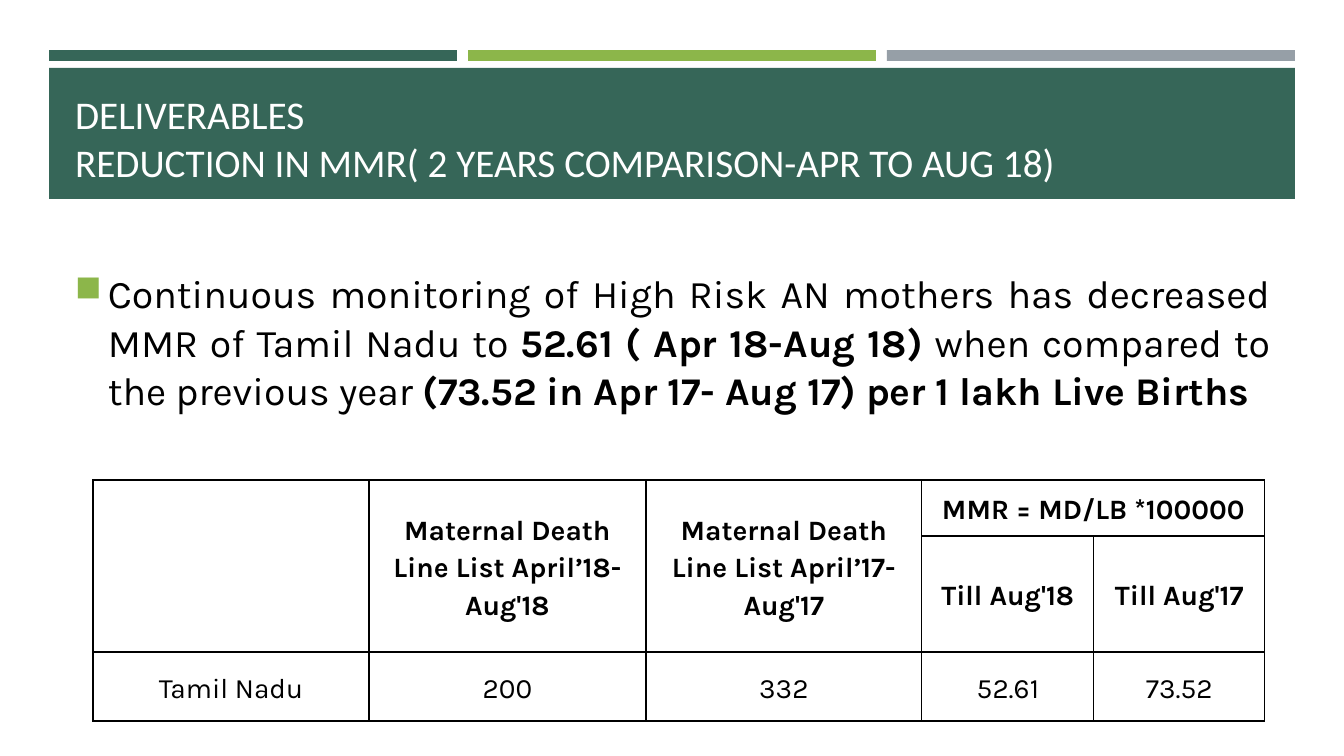
from lxml.etree import SubElement
from pptx import Presentation
from pptx.dml.color import RGBColor
from pptx.enum.shapes import MSO_SHAPE
from pptx.enum.text import MSO_ANCHOR, MSO_AUTO_SIZE, PP_ALIGN
from pptx.oxml.ns import qn
from pptx.util import Pt

COLORS = {"green": "366658", "lime": "8CB64A", "gray": "969FA7",
          "white": "FFFFFF", "black": "000000"}
TITLE = "DELIVERABLES\vREDUCTION IN MMR( 2 YEARS COMPARISON-APR TO AUG 18)"
# Each run is (text, bold)
BODY = [
    ("Continuous monitoring of High Risk AN mothers has decreased MMR of Tamil Nadu to ", False),
    ("52.61 ( Apr 18-Aug 18)", True),
    (" when compared to the previous year ", False),
    ("(73.52 in Apr 17- Aug 17) per 1 lakh Live Births", True),
]
TABLE = [
    ["", "Maternal Death Line List April’18-Aug'18",
     "Maternal Death Line List April’17-Aug'17", "MMR = MD/LB *100000", ""],
    ["", "", "", "Till Aug'18", "Till Aug'17"],
    ["Tamil Nadu", "200", "332", "52.61", "73.52"],
]
MERGES = [((0, c), (1, c)) for c in range(3)] + [((0, 3), (0, 4))]
COL_WIDTHS = [276, 277, 276, 172, 171]
ROW_HEIGHTS = [56, 114, 69]
HEADER_ROWS = 2


def px(n):
    return round(n * 9144000 / 1008)


def rgb(name):
    return RGBColor.from_string(COLORS[name])


def place(sp, left, top, width, height):
    sp.left, sp.top, sp.width, sp.height = map(px, (left, top, width, height))


def write(tf, runs, size, font="Karla", color="black", align=PP_ALIGN.LEFT, spacing=1.0):
    """Fill the first paragraph with (text, bold) runs."""
    p = tf.paragraphs[0]
    p.alignment, p.line_spacing = align, spacing
    for text, bold in runs:
        for i, line in enumerate(text.split("\v")):
            if i:
                p.add_line_break()
            r = p.add_run()
            r.text = line
            r.font.size, r.font.name, r.font.bold = Pt(size), font, bold
            r.font.color.rgb = rgb(color)
    return p


def add_bar(slide, color, *box):
    sp = slide.shapes.add_shape(MSO_SHAPE.RECTANGLE, *map(px, box))
    sp.shadow.inherit = False
    sp.fill.solid()
    sp.fill.fore_color.rgb = rgb(color)
    sp.line.fill.background()


def add_bullet(p, char, color, percent, indent):
    pPr = p._p.get_or_add_pPr()
    pPr.set("marL", str(px(indent)))
    pPr.set("indent", str(-px(indent)))
    clr = SubElement(pPr, qn("a:buClr"))
    SubElement(clr, qn("a:srgbClr"), val=COLORS[color])
    SubElement(pPr, qn("a:buSzPct"), val=str(percent * 1000))
    SubElement(pPr, qn("a:buChar"), char=char)


def add_borders(cell):
    tcPr = cell._tc.get_or_add_tcPr()
    for i, side in enumerate(("lnL", "lnR", "lnT", "lnB")):
        ln = tcPr.makeelement(qn(f"a:{side}"), {"w": str(Pt(1))})
        tcPr.insert(i, ln)
        fill = SubElement(ln, qn("a:solidFill"))
        SubElement(fill, qn("a:srgbClr"), val=COLORS["black"])


def add_header(slide):
    for i, color in enumerate(("green", "lime", "gray")):
        add_bar(slide, color, 49 + 419 * i, 50, 408, 11)
    add_bar(slide, "green", 49, 68, 1246, 131)
    title = slide.shapes.title
    slide.shapes.element.append(title.element)  # bring in front of the band
    place(title, 65, 78, 1215, 112)
    tf = title.text_frame
    tf.auto_size, tf.vertical_anchor = MSO_AUTO_SIZE.NONE, MSO_ANCHOR.BOTTOM
    write(tf, [(TITLE, False)], 28, font="Calibri", color="white")


def add_body(slide):
    tf = slide.shapes.add_textbox(*map(px, (65, 221, 1215, 240))).text_frame
    tf.word_wrap, tf.vertical_anchor = True, MSO_ANCHOR.MIDDLE
    p = write(tf, BODY, 28, align=PP_ALIGN.JUSTIFY, spacing=1.03)
    p.space_before, p.space_after = Pt(5.6), Pt(6)
    add_bullet(p, "■", "lime", 92, 33)


def add_mmr_table(slide):
    box = (93, 480, sum(COL_WIDTHS), sum(ROW_HEIGHTS))
    table = slide.shapes.add_table(len(TABLE), len(COL_WIDTHS), *map(px, box)).table
    table.first_row = table.horz_banding = False
    for col, width in zip(table.columns, COL_WIDTHS):
        col.width = px(width)
    for row, height in zip(table.rows, ROW_HEIGHTS):
        row.height = px(height)
    for start, end in MERGES:
        table.cell(*start).merge(table.cell(*end))
    for r, texts in enumerate(TABLE):
        for c, text in enumerate(texts):
            cell = table.cell(r, c)
            cell.fill.background()
            add_borders(cell)
            cell.vertical_anchor = MSO_ANCHOR.MIDDLE
            cell.margin_left = cell.margin_right = px(10)
            cell.margin_top = cell.margin_bottom = 0
            if text:
                write(cell.text_frame, [(text, r < HEADER_ROWS)], 20,
                      align=PP_ALIGN.CENTER, spacing=1.15)


def main():
    prs = Presentation()
    prs.slide_width, prs.slide_height = px(1344), px(756)
    slide = prs.slides.add_slide(prs.slide_layouts[5])
    add_header(slide)
    add_body(slide)
    add_mmr_table(slide)
    prs.save("out.pptx")


if __name__ == "__main__":
    main()
